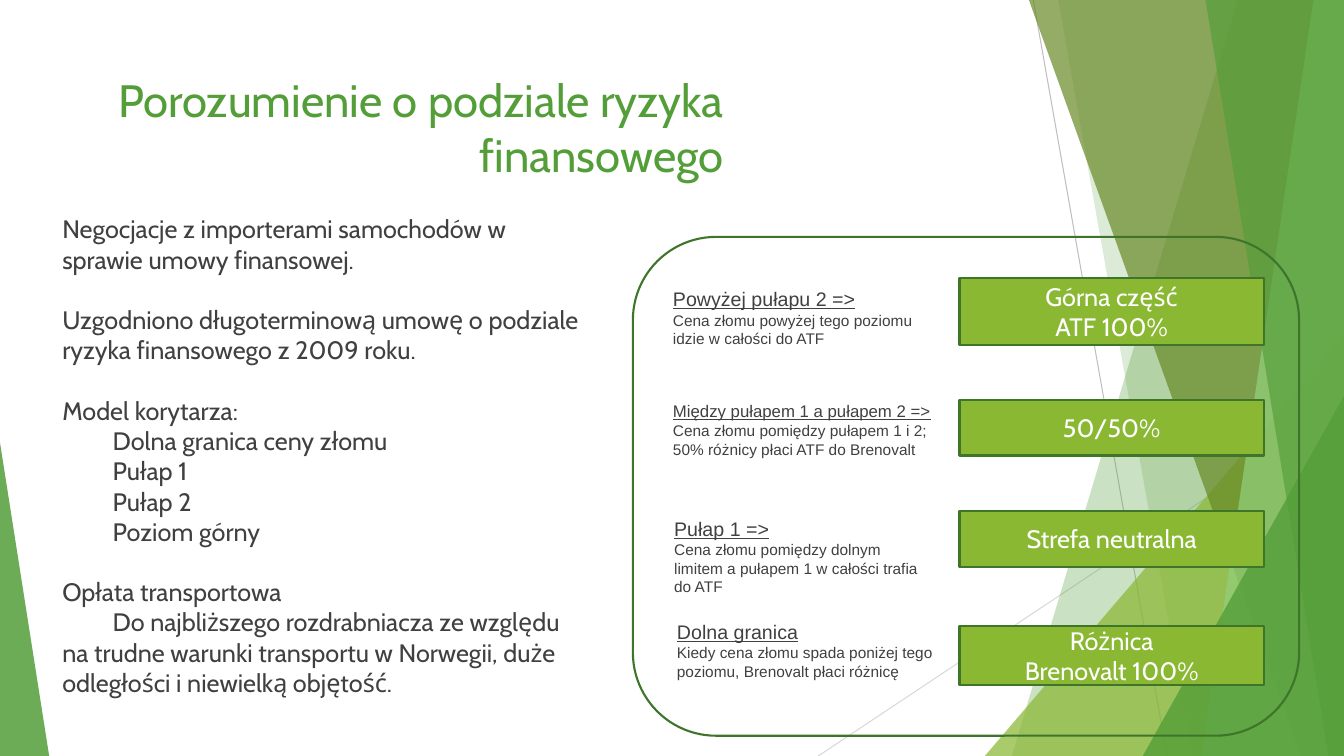
import lxml.etree
import pptx
import pptx.dml.color
import pptx.enum.shapes
import pptx.enum.text
import pptx.oxml.ns
import pptx.util

Cm = pptx.util.Cm
Pt = pptx.util.Pt
RGBColor = pptx.dml.color.RGBColor
Shape = pptx.enum.shapes.MSO_SHAPE
Align = pptx.enum.text.PP_ALIGN
Anchor = pptx.enum.text.MSO_ANCHOR
qn = pptx.oxml.ns.qn

GREEN = RGBColor(0x54, 0x9E, 0x39)
LIME = RGBColor(0x8A, 0xB8, 0x33)
OLIVE = RGBColor(0x67, 0x8A, 0x26)
MINT = RGBColor(0x93, 0xD0, 0x7D)
OUTLINE = RGBColor(0x3E, 0x75, 0x2A)
TEXT = RGBColor(0x40, 0x40, 0x40)
WHITE = RGBColor(0xFF, 0xFF, 0xFF)
GREY = RGBColor(0xBF, 0xBF, 0xBF)
LIGHT_GREY = RGBColor(0xD9, 0xD9, 0xD9)

WIDTH, HEIGHT = 33.87, 19.05

BODY = [
    ("Negocjacje z importerami samochodów w sprawie umowy finansowej.", False, False),
    ("Uzgodniono długoterminową umowę o podziale ryzyka finansowego z 2009 roku.", True, False),
    ("Model korytarza:", True, False),
    ("Dolna granica ceny złomu", False, True),
    ("Pułap 1", False, True),
    ("Pułap 2", False, True),
    ("Poziom górny", False, True),
    ("Opłata transportowa", True, False),
    ("Do najbliższego rozdrabniacza ze względu na trudne warunki transportu "
     "w Norwegii, duże odległości i niewielką objętość.", False, True),
]

LEVELS = [
    ("Powyżej pułapu 2 =>", 14, "Cena złomu powyżej tego poziomu idzie w całości do ATF",
     (0.76, 1.14, 7.09), ["Górna część", "ATF 100%"], (1.04, 1.68)),
    ("Między pułapem 1 a pułapem 2 =>", 12,
     "Cena złomu pomiędzy pułapem 1 i 2; 50% różnicy płaci ATF do Brenovalt",
     (0.76, 4.01, 7.09), ["50/50%"], (4.11, 1.4)),
    ("Pułap 1 =>", 14, "Cena złomu pomiędzy dolnym limitem a pułapem 1 w całości trafia do ATF",
     (0.79, 6.93, 6.91), ["Strefa neutralna"], (6.91, 1.4)),
    ("Dolna granica", 14, "Kiedy cena złomu spada poniżej tego poziomu, Brenovalt płaci różnicę",
     (0.86, 9.52, 7.01), ["Różnica", "Brenovalt 100%"], (9.8, 1.5)),
]


def write(frame, text, size=18, font="Cabin", color=TEXT, align=Align.LEFT,
          underline=False, before=0, indent=0):
    """Add one formatted paragraph to a text frame."""
    para = frame.paragraphs[0]
    if para.runs:
        para = frame.add_paragraph()
    para.alignment = align
    para.space_before = Pt(before)
    if indent:
        para._p.get_or_add_pPr().set("indent", str(Cm(indent)))
    span = para.add_run()
    span.text = text
    span.font.size = Pt(size)
    span.font.name = font
    span.font.color.rgb = color
    span.font.underline = underline


def add_frame(page, box, anchor=Anchor.TOP):
    """Add a wrapping text box and return its text frame."""
    frame = page.shapes.add_textbox(*map(Cm, box)).text_frame
    frame.word_wrap = True
    frame.vertical_anchor = anchor
    return frame


def tint(shape, color, opacity):
    """Fill a shape with a translucent colour and no outline."""
    shape.shadow.inherit = False
    shape.fill.solid()
    shape.fill.fore_color.rgb = color
    shape.line.fill.background()
    clr = shape._element.spPr.find(qn("a:solidFill"))[0]
    lxml.etree.SubElement(clr, qn("a:alpha")).set("val", str(opacity * 1000))


def add_ray(page, start, end, color):
    """Draw a thin straight background line."""
    ray = page.shapes.add_connector(
        pptx.enum.shapes.MSO_CONNECTOR.STRAIGHT, *map(Cm, start + end))
    ray.line.color.rgb = color
    ray.line.width = Pt(0.75)
    lxml.etree.SubElement(ray._element.spPr, qn("a:effectLst"))


def add_band(page, top_x, bottom_x, color, opacity):
    """Draw a full-height band from a slanted edge to the right side."""
    builder = page.shapes.build_freeform(Cm(top_x), Cm(0))
    corners = [(WIDTH, 0), (WIDTH, HEIGHT), (bottom_x, HEIGHT)]
    builder.add_line_segments([(Cm(x), Cm(y)) for x, y in corners])
    tint(builder.convert_to_shape(), color, opacity)


def add_wedge(page, left, top, width, apex, color, opacity):
    """Draw a right triangle standing on the bottom edge."""
    wedge = page.shapes.add_shape(
        Shape.ISOSCELES_TRIANGLE, Cm(left), Cm(top), Cm(width), Cm(HEIGHT - top))
    wedge.adjustments[0] = apex
    tint(wedge, color, opacity)


def add_backdrop(page):
    """Draw the faceted green background."""
    add_ray(page, (26.04, 0), (29.41, HEIGHT), GREY)
    add_ray(page, (WIDTH, 10.24), (20.62, HEIGHT), LIGHT_GREY)
    add_band(page, 31.19, 25.5, GREEN, 30)
    add_band(page, 26.67, 30.05, GREEN, 20)
    add_wedge(page, 24.82, 8.46, 9.05, 1, LIME, 72)
    add_band(page, 25.93, 32.79, OLIVE, 70)
    add_band(page, 33.1, 30.28, MINT, 70)
    add_band(page, 30.38, 33.48, GREEN, 65)
    add_wedge(page, 28.8, 9.98, 5.07, 1, GREEN, 80)
    add_wedge(page, 0, 11.15, 1.24, 0, GREEN, 85)


def add_title(page, box):
    """Place the right-aligned slide title."""
    frame = add_frame(page, box, Anchor.MIDDLE)
    write(frame, "Porozumienie o podziale ryzyka finansowego", size=32.4,
          color=GREEN, align=Align.RIGHT)


def add_body(page, box):
    """Place the explanatory text in spaced groups."""
    frame = add_frame(page, box)
    for text, new_group, indented in BODY:
        write(frame, text, before=21.6 if new_group else 0, indent=1.27 if indented else 0)


def add_outlined(page, kind, box):
    """Add a shape with the dark green outline."""
    shape = page.shapes.add_shape(kind, *map(Cm, box))
    shape.shadow.inherit = False
    shape.line.color.rgb = OUTLINE
    shape.line.width = Pt(1.5)
    return shape


def add_corridor(page, box):
    """Draw the price levels with their shares inside a rounded panel."""
    left, top, _, _ = box
    for heading, size, detail, (dx, dy, width), share, (share_dy, height) in LEVELS:
        frame = add_frame(page, (left + dx, top + dy, width, 1.8))
        write(frame, heading, size=size, font="Arial", underline=True)
        write(frame, detail, size=11, font="Arial")
        tile = add_outlined(page, Shape.RECTANGLE, (left + 8.23, top + share_dy, 7.67, height))
        tile.fill.solid()
        tile.fill.fore_color.rgb = LIME
        tile.text_frame.vertical_anchor = Anchor.MIDDLE
        for line in share:
            write(tile.text_frame, line, color=WHITE, align=Align.CENTER)
    add_outlined(page, Shape.ROUNDED_RECTANGLE, box).fill.background()


def main():
    """Build the slide and save the deck."""
    deck = pptx.Presentation()
    deck.slide_width, deck.slide_height = Cm(WIDTH), Cm(HEIGHT)
    page = deck.slides.add_slide(deck.slide_layouts[6])
    add_backdrop(page)
    add_title(page, (0.3, 1.75, 18.19, 2.9))
    add_body(page, (1.32, 5.26, 13.67, 13.5))
    add_corridor(page, (15.95, 5.97, 16.79, 12.57))
    deck.save("out.pptx")


if __name__ == "__main__":
    main()
